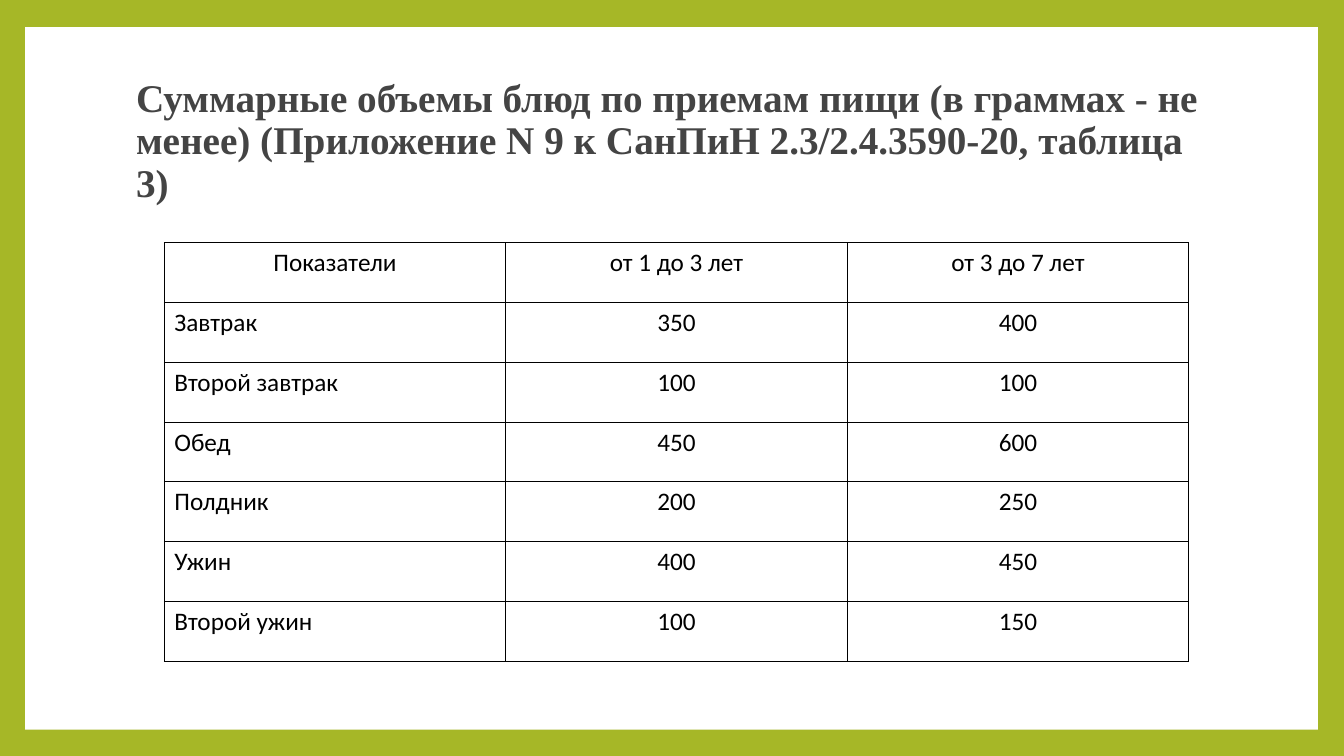
from dataclasses import dataclass

from lxml import etree
from pptx import Presentation
from pptx.dml.color import RGBColor
from pptx.enum.shapes import MSO_SHAPE
from pptx.enum.text import MSO_ANCHOR, MSO_AUTO_SIZE, PP_ALIGN
from pptx.oxml.ns import qn
from pptx.util import Inches, Pt

RECTANGLE = MSO_SHAPE.RECTANGLE
MIDDLE = MSO_ANCHOR.MIDDLE
NO_AUTOFIT = MSO_AUTO_SIZE.NONE
LEFT, CENTER = PP_ALIGN.LEFT, PP_ALIGN.CENTER


@dataclass(frozen=True)
class Theme:
    frame: RGBColor = RGBColor.from_string("A6B727")
    paper: RGBColor = RGBColor.from_string("FFFFFF")
    heading: RGBColor = RGBColor.from_string("444444")
    ink: RGBColor = RGBColor.from_string("000000")
    heading_font: str = "Times New Roman"
    body_font: str = "Calibri"
    heading_size: Pt = Pt(28)
    body_size: Pt = Pt(18)
    border_width: Pt = Pt(0.75)


THEME = Theme()

TITLE = ("Суммарные объемы блюд по приемам пищи (в граммах - не менее) "
         "(Приложение N 9 к СанПиН 2.3/2.4.3590-20, таблица 3)")
MEALS = [
    ("Показатели", "от 1 до 3 лет", "от 3 до 7 лет"),
    ("Завтрак", 350, 400),
    ("Второй завтрак", 100, 100),
    ("Обед", 450, 600),
    ("Полдник", 200, 250),
    ("Ужин", 400, 450),
    ("Второй ужин", 100, 150),
]


def add_borders(cell):
    """Draw all four cell edges; they must precede the cell's fill in the XML."""
    properties = cell._tc.get_or_add_tcPr()
    for position, side in enumerate(("a:lnL", "a:lnR", "a:lnT", "a:lnB")):
        line = etree.Element(qn(side), w=str(THEME.border_width))
        fill = etree.SubElement(line, qn("a:solidFill"))
        etree.SubElement(fill, qn("a:srgbClr"), val=str(THEME.ink))
        properties.insert(position, line)


prs = Presentation()
prs.slide_width, prs.slide_height = Inches(13.33), Inches(7.5)
slide = prs.slides.add_slide(prs.slide_layouts[5])
slide.background.fill.solid()
slide.background.fill.fore_color.rgb = THEME.frame

# White panel, sent behind the title
panel = slide.shapes.add_shape(
    RECTANGLE, Inches(0.25), Inches(0.27), Inches(12.82), Inches(6.97))
panel.shadow.inherit = False
panel.fill.solid()
panel.fill.fore_color.rgb = THEME.paper
panel.line.fill.background()
slide.shapes._spTree.insert(2, panel._element)

# Title
title = slide.shapes.title
title.left, title.top = Inches(1.25), Inches(0.67)
title.width, title.height = Inches(10.8), Inches(1.48)
title.text_frame.text = TITLE
title.text_frame.word_wrap = True
title.text_frame.auto_size = NO_AUTOFIT
title.text_frame.vertical_anchor = MIDDLE
heading = title.text_frame.paragraphs[0]
heading.alignment = LEFT
heading.line_spacing = 0.9
heading.font.name = THEME.heading_font
heading.font.size = THEME.heading_size
heading.font.bold = True
heading.font.color.rgb = THEME.heading

# Table of portion sizes
portions = slide.shapes.add_table(
    len(MEALS), len(MEALS[0]),
    Inches(1.63), Inches(2.41), Inches(10.16), Inches(4.15)).table
portions.first_row = False
portions.horz_banding = False
for row, meal in enumerate(MEALS):
    for column, value in enumerate(meal):
        cell = portions.cell(row, column)
        cell.text = str(value)
        cell.fill.solid()
        cell.fill.fore_color.rgb = THEME.paper
        add_borders(cell)
        entry = cell.text_frame.paragraphs[0]
        entry.alignment = LEFT if row and column == 0 else CENTER
        entry.font.name = THEME.body_font
        entry.font.size = THEME.body_size
        entry.font.color.rgb = THEME.ink

prs.save("out.pptx")
